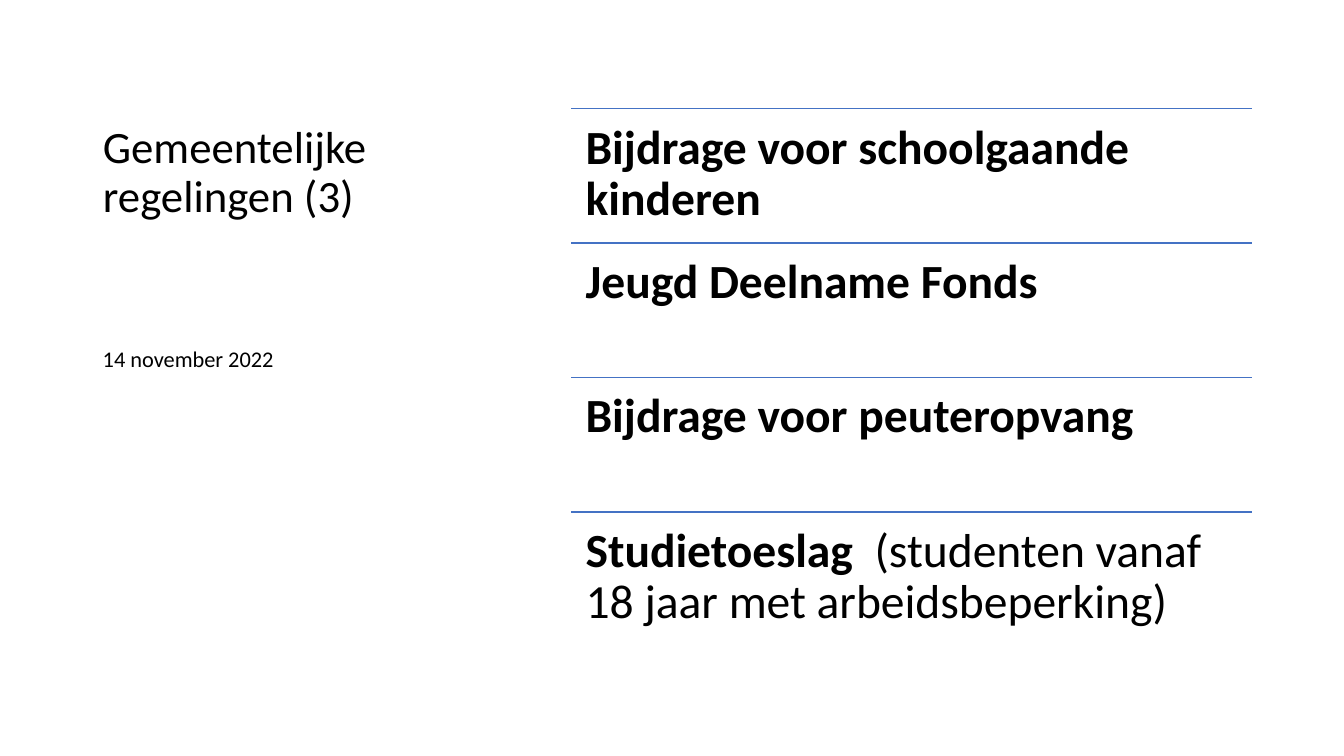
from dataclasses import dataclass

from lxml import etree
from pptx import Presentation
from pptx.dml.color import RGBColor
from pptx.enum.shapes import MSO_CONNECTOR
from pptx.enum.text import MSO_ANCHOR, MSO_AUTO_SIZE, PP_ALIGN
from pptx.oxml.ns import qn
from pptx.slide import Slide
from pptx.text.text import TextFrame, _Paragraph, _Run
from pptx.util import Cm, Pt

COLORS = {"text": "000000", "rule": "4472C4"}
FONT = "Calibri"

# Left column and the list on the right
COLUMN_LEFT, COLUMN_WIDTH = Cm(2.34), Cm(10.92)
LIST_LEFT, LIST_TOP, LIST_WIDTH, LIST_HEIGHT = Cm(14.4), Cm(2.74), Cm(17.15), Cm(13.55)
LIST_INSET = Cm(0.36)


@dataclass(frozen=True)
class Scheme:
    name: str
    detail: str = ""


SCHEMES = [
    Scheme("Bijdrage voor schoolgaande kinderen"),
    Scheme("Jeugd Deelname Fonds"),
    Scheme("Bijdrage voor peuteropvang"),
    Scheme("Studietoeslag", "  (studenten vanaf 18 jaar met arbeidsbeperking)"),
]


def format_run(run: _Run, size: float, bold: bool = False) -> None:
    run.font.name = FONT
    run.font.size = Pt(size)
    run.font.bold = bold
    run.font.color.rgb = RGBColor.from_string(COLORS["text"])


def write(frame: TextFrame, text: str, size: float, bold: bool = False) -> _Paragraph:
    frame.word_wrap = True
    frame.auto_size = MSO_AUTO_SIZE.NONE
    frame.text = text
    paragraph = frame.paragraphs[0]
    paragraph.alignment = PP_ALIGN.LEFT
    paragraph.line_spacing = 0.9
    format_run(paragraph.runs[0], size, bold)
    return paragraph


def add_rule(slide: Slide, top: int) -> None:
    rule = slide.shapes.add_connector(
        MSO_CONNECTOR.STRAIGHT, LIST_LEFT, top, LIST_LEFT + LIST_WIDTH, top)
    rule.line.color.rgb = RGBColor.from_string(COLORS["rule"])
    rule.line.width = Pt(1)
    etree.SubElement(rule._element.spPr, qn("a:effectLst"))


def add_scheme(slide: Slide, scheme: Scheme, top: int, height: int) -> None:
    add_rule(slide, top)
    frame = slide.shapes.add_textbox(LIST_LEFT, top, LIST_WIDTH, height).text_frame
    frame.margin_left = frame.margin_right = LIST_INSET
    frame.margin_top = frame.margin_bottom = LIST_INSET
    paragraph = write(frame, scheme.name, 34, bold=True)
    if scheme.detail:
        detail = paragraph.add_run()
        detail.text = scheme.detail
        format_run(detail, 34)


def main() -> None:
    presentation = Presentation()
    presentation.slide_width, presentation.slide_height = Cm(33.87), Cm(19.05)
    slide = presentation.slides.add_slide(presentation.slide_layouts[5])

    # Title
    title = slide.shapes.title
    title.left, title.top = COLUMN_LEFT, Cm(1.27)
    title.width, title.height = COLUMN_WIDTH, Cm(4.45)
    write(title.text_frame, "Gemeentelijke regelingen (3)", 32)
    title.text_frame.vertical_anchor = MSO_ANCHOR.BOTTOM

    # Ruled list of schemes
    row_height = LIST_HEIGHT // len(SCHEMES)
    for row, scheme in enumerate(SCHEMES):
        add_scheme(slide, scheme, LIST_TOP + row * row_height, row_height)

    # Date
    date = slide.shapes.add_textbox(COLUMN_LEFT, Cm(5.72), COLUMN_WIDTH, Cm(10.59))
    date.text_frame.margin_top = Cm(3.05)
    write(date.text_frame, "14 november 2022", 16)

    presentation.save("out.pptx")


if __name__ == "__main__":
    main()
